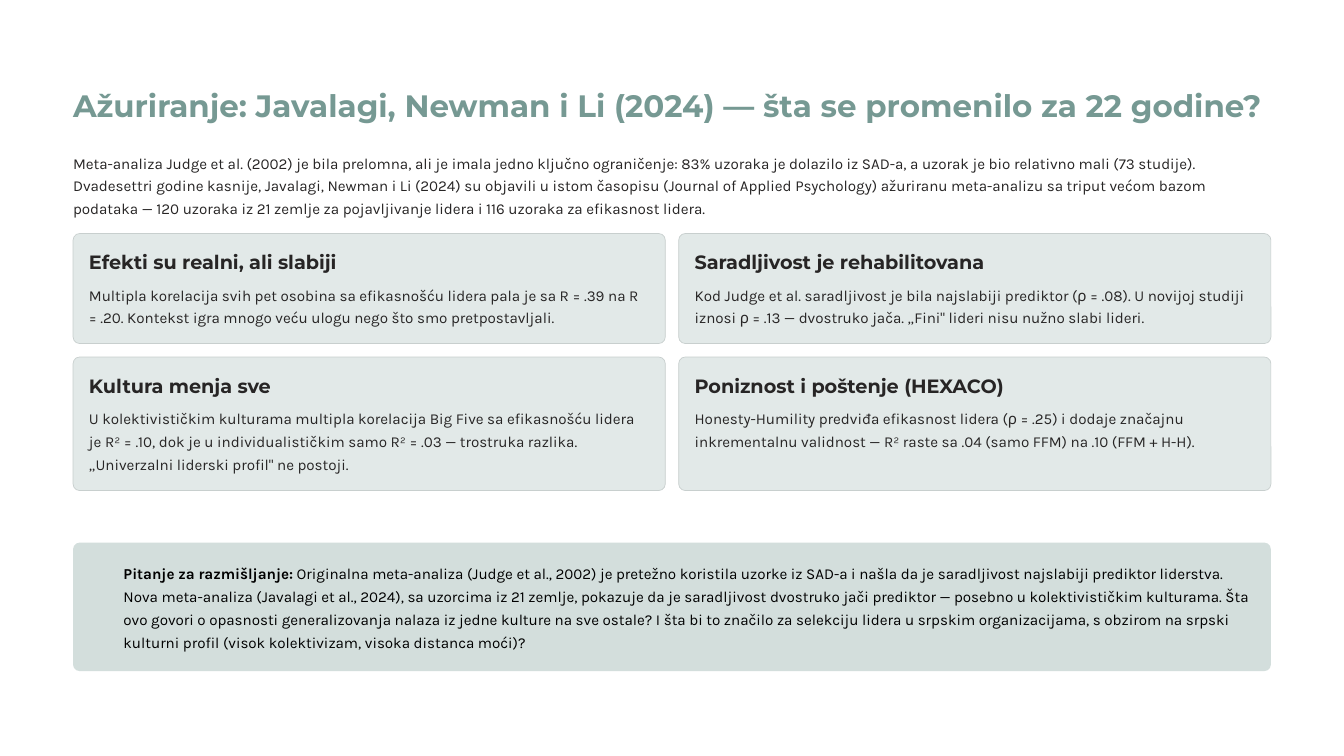
from dataclasses import dataclass

from pptx import Presentation
from pptx.dml.color import RGBColor
from pptx.enum.shapes import MSO_SHAPE
from pptx.slide import Slide
from pptx.util import Inches, Pt

ROUNDED = MSO_SHAPE.ROUNDED_RECTANGLE
WHITE = RGBColor(0xFF, 0xFF, 0xFF)
BLACK = RGBColor(0x00, 0x00, 0x00)
INK = RGBColor(0x27, 0x25, 0x25)
SAGE = RGBColor(0x76, 0x99, 0x93)
CARD_FILL = RGBColor(0xE2, 0xE9, 0xE8)
CARD_LINE = RGBColor(0xC8, 0xCF, 0xCE)
QUESTION_FILL = RGBColor(0xD3, 0xDE, 0xDC)

HEADING_FONT = "Montserrat"
BODY_FONT = "Karla"
MARGIN = 0.87
CONTENT_WIDTH = 14.26
CARD_WIDTH = 7.05
CARD_STEP = 7.21
CARD_PADDING = 0.19
CORNER_RADIUS = 0.078


@dataclass
class Card:
    heading: str
    body: str


@dataclass
class CardRow:
    top: float
    height: float
    cards: list[Card]


TITLE = "Ažuriranje: Javalagi, Newman i Li (2024) — šta se promenilo za 22 godine?"
INTRO = (
    "Meta-analiza Judge et al. (2002) je bila prelomna, ali je imala jedno ključno ograničenje: "
    "83% uzoraka je dolazilo iz SAD-a, a uzorak je bio relativno mali (73 studije). "
    "Dvadesettri godine kasnije, Javalagi, Newman i Li (2024) su objavili u istom časopisu "
    "(Journal of Applied Psychology) ažuriranu meta-analizu sa triput većom bazom podataka — "
    "120 uzoraka iz 21 zemlje za pojavljivanje lidera i 116 uzoraka za efikasnost lidera."
)
CARD_ROWS = [
    CardRow(2.78, 1.31, [
        Card("Efekti su realni, ali slabiji",
             "Multipla korelacija svih pet osobina sa efikasnošću lidera pala je sa R = .39 na "
             "R = .20. Kontekst igra mnogo veću ulogu nego što smo pretpostavljali."),
        Card("Saradljivost je rehabilitovana",
             "Kod Judge et al. saradljivost je bila najslabiji prediktor (ρ = .08). U novijoj "
             "studiji iznosi ρ = .13 — dvostruko jača. „Fini\" lideri nisu nužno slabi lideri."),
    ]),
    CardRow(4.25, 1.59, [
        Card("Kultura menja sve",
             "U kolektivističkim kulturama multipla korelacija Big Five sa efikasnošću lidera je "
             "R² = .10, dok je u individualističkim samo R² = .03 — trostruka razlika. "
             "„Univerzalni liderski profil\" ne postoji."),
        Card("Poniznost i poštenje (HEXACO)",
             "Honesty-Humility predviđa efikasnost lidera (ρ = .25) i dodaje značajnu "
             "inkrementalnu validnost — R² raste sa .04 (samo FFM) na .10 (FFM + H-H)."),
    ]),
]
QUESTION_LABEL = "Pitanje za razmišljanje:"
QUESTION = (
    " Originalna meta-analiza (Judge et al., 2002) je pretežno koristila uzorke iz SAD-a i našla "
    "da je saradljivost najslabiji prediktor liderstva. Nova meta-analiza (Javalagi et al., 2024), "
    "sa uzorcima iz 21 zemlje, pokazuje da je saradljivost dvostruko jači prediktor — posebno u "
    "kolektivističkim kulturama. Šta ovo govori o opasnosti generalizovanja nalaza iz jedne kulture "
    "na sve ostale? I šta bi to značilo za selekciju lidera u srpskim organizacijama, s obzirom na "
    "srpski kulturni profil (visok kolektivizam, visoka distanca moći)?"
)


def add_text(page: Slide, text: str, *, left: float, top: float, width: float, height: float,
             label: str = "", font: str = BODY_FONT, size: float = 13, spacing: float = 19.5,
             color: RGBColor = INK, bold: bool = False) -> None:
    box = page.shapes.add_textbox(Inches(left), Inches(top), Inches(width), Inches(height))
    frame = box.text_frame
    frame.word_wrap = True
    frame.margin_left = frame.margin_right = frame.margin_top = frame.margin_bottom = 0
    para = frame.paragraphs[0]
    para.line_spacing = Pt(spacing)
    for content, heavy in ((label, True), (text, bold)):
        if content:
            span = para.add_run()
            span.text = content
            span.font.name = font
            span.font.size = Pt(size)
            span.font.bold = heavy
            span.font.color.rgb = color


def add_panel(page: Slide, *, left: float, top: float, width: float, height: float,
              fill: RGBColor, line: RGBColor | None = None) -> None:
    panel = page.shapes.add_shape(ROUNDED, Inches(left), Inches(top), Inches(width), Inches(height))
    panel.adjustments[0] = CORNER_RADIUS / height
    panel.shadow.inherit = False
    panel.fill.solid()
    panel.fill.fore_color.rgb = fill
    if line is None:
        panel.line.fill.background()
    else:
        panel.line.color.rgb = line
        panel.line.width = Pt(0.6)


def add_card_row(page: Slide, row: CardRow) -> None:
    for column, card in enumerate(row.cards):
        left = MARGIN + column * CARD_STEP
        add_panel(page, left=left, top=row.top, width=CARD_WIDTH, height=row.height,
                  fill=CARD_FILL, line=CARD_LINE)
        text_left = left + CARD_PADDING
        text_width = CARD_WIDTH - 2 * CARD_PADDING
        add_text(page, card.heading, left=text_left, top=row.top + CARD_PADDING, width=text_width,
                 height=0.29, font=HEADING_FONT, size=16.5, spacing=20.5, bold=True)
        add_text(page, card.body, left=text_left, top=row.top + 0.57, width=text_width,
                 height=row.height - 0.76)


def main() -> None:
    deck = Presentation()
    deck.slide_width = Inches(16)
    deck.slide_height = Inches(9)
    page = deck.slides.add_slide(deck.slide_layouts[6])
    page.background.fill.solid()
    page.background.fill.fore_color.rgb = WHITE

    add_text(page, TITLE, left=MARGIN, top=1.01, width=CONTENT_WIDTH, height=0.46,
             font=HEADING_FONT, size=26.5, spacing=33, color=SAGE, bold=True)
    add_text(page, INTRO, left=MARGIN, top=1.78, width=CONTENT_WIDTH, height=0.82)
    for row in CARD_ROWS:
        add_card_row(page, row)
    add_panel(page, left=MARGIN, top=6.46, width=CONTENT_WIDTH, height=1.53, fill=QUESTION_FILL)
    add_text(page, QUESTION, label=QUESTION_LABEL, left=1.47, top=6.67, width=13.48, height=1.09,
             color=BLACK)
    deck.save("out.pptx")


if __name__ == "__main__":
    main()
